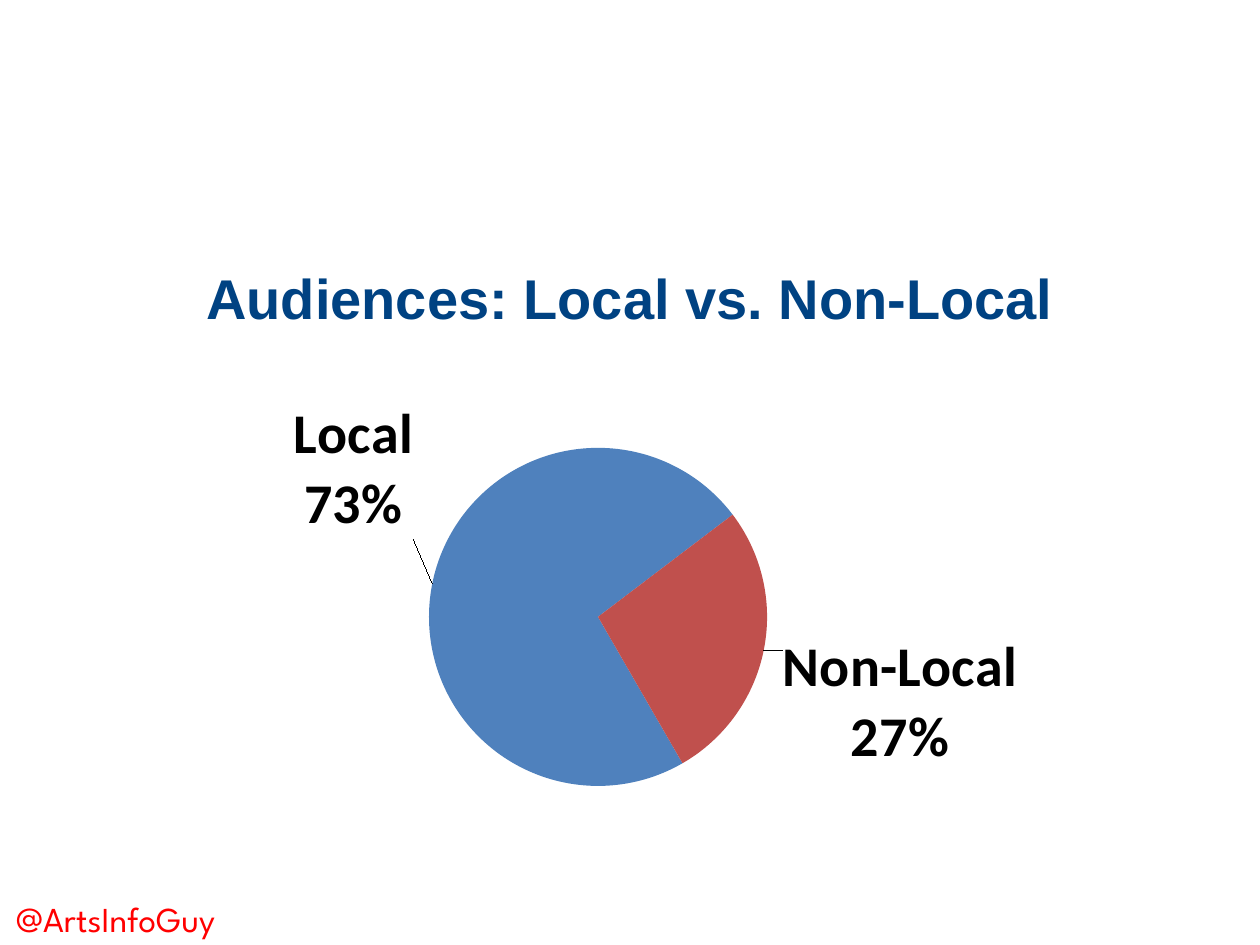
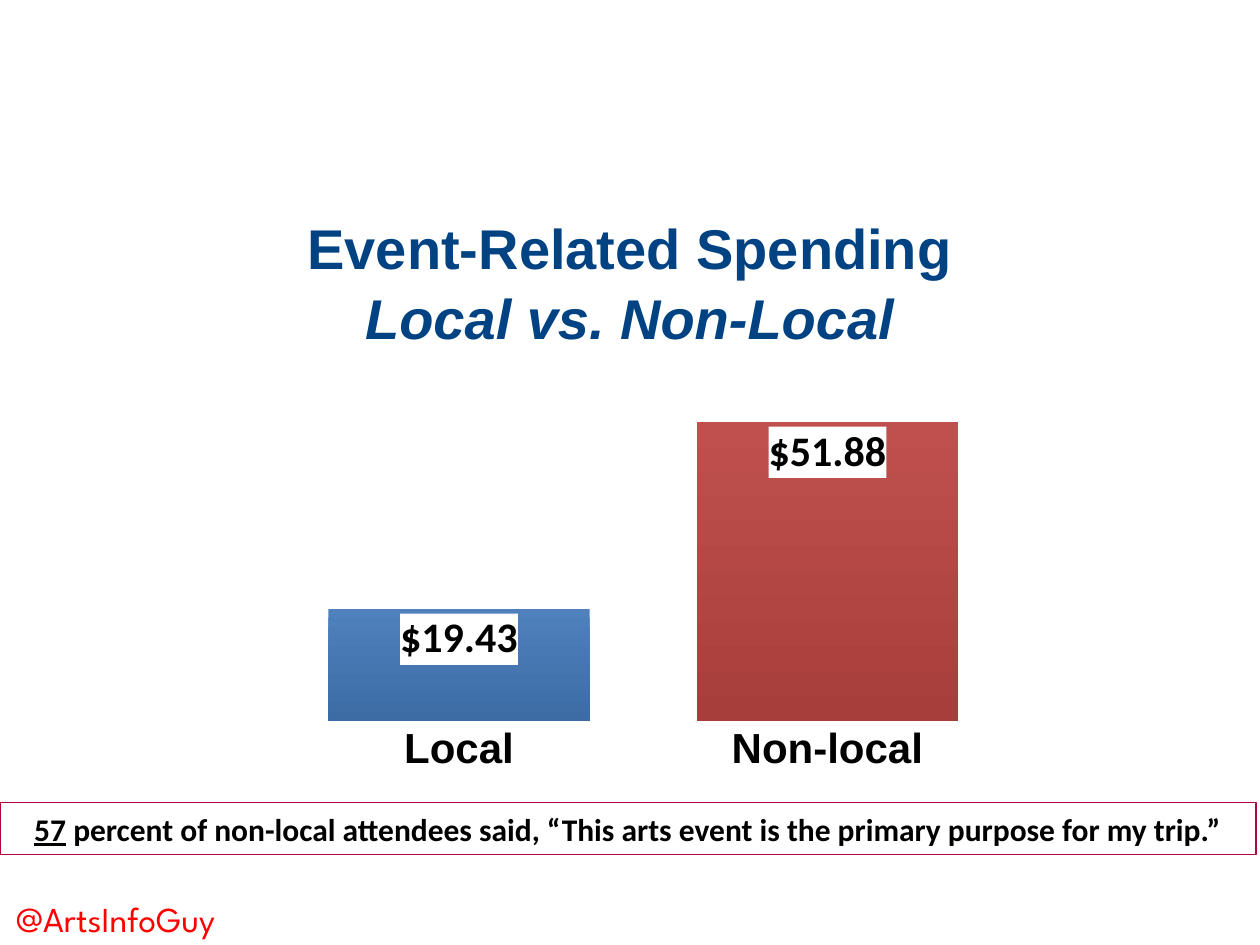
from lxml import etree
from pptx import Presentation
from pptx import util as u
from pptx.chart.data import CategoryChartData
from pptx.dml.color import RGBColor
from pptx.enum import chart as ch, shapes, text
from pptx.oxml import parse_xml
from pptx.oxml.ns import nsdecls, qn

WIDTH, HEIGHT = 10, 7.5
NAVY = RGBColor(0x00, 0x42, 0x82)
RED = RGBColor(0xFF, 0x00, 0x00)
CRIMSON = RGBColor(0xB1, 0x06, 0x3A)
BLACK = RGBColor(0x00, 0x00, 0x00)
LOCAL = RGBColor(0x4F, 0x81, 0xBD)
LOCAL_DARK = RGBColor(0x3D, 0x6C, 0xA4)
VISITOR = RGBColor(0xC0, 0x50, 0x4D)
VISITOR_DARK = RGBColor(0xA7, 0x3E, 0x3B)

HANDLE = "@ArtsInfoGuy"
DOLLARS = '"$"#,##0.00'
AUDIENCE = {
    "title": [("Audiences: Local vs. Non-Local", False)],
    "title_top": 2,
    "shares": {"Local": 73, "Non-Local": 27},
    "colours": [LOCAL, VISITOR],
    "label_shifts": [(-0.01, -0.09), (0.01, -0.04)],
    "chart_box": (-0.23, 2.95, 9.39, 3.78),
    "plot_box": {"x": 0.34, "y": 0.16, "w": 0.38, "h": 0.71},
    "first_angle": 150,
}
SPENDING = {
    "title": [("Event-Related Spending", False), ("Local vs. Non-Local", True)],
    "title_top": 1.6,
    "amounts": {"Local": 19.43, "Non-local": 51.88},
    "gradients": [(LOCAL, LOCAL_DARK), (VISITOR, VISITOR_DARK)],
    "chart_box": (2.06, 2.91, 6.09, 3.29),
    "quote": [
        ("57", True),
        (" percent of non-local attendees said, “This arts event is the "
         "primary purpose for my trip.”", False),
    ],
    "quote_box": (0, 6.37, 9.97, 0.41),
}


def inches(box):
    return [u.Inches(length) for length in box]


def style(font, name, size, colour, bold=False):
    font.name, font.size, font.bold = name, u.Pt(size), bold
    font.color.rgb = colour


def new_slide(deck, content):
    """Add a slide with its title and the handle at the foot."""
    slide = deck.slides.add_slide(deck.slide_layouts[0])
    subtitle = slide.placeholders[1].element
    subtitle.getparent().remove(subtitle)

    title = slide.shapes.title
    title.left, title.top, title.width, title.height = inches(
        (0, content["title_top"], WIDTH, 0.95))
    frame = title.text_frame
    frame.auto_size = text.MSO_AUTO_SIZE.NONE
    frame.vertical_anchor = text.MSO_ANCHOR.TOP
    frame.margin_top = u.Inches(0.07)
    heading = frame.paragraphs[0]
    heading.alignment = text.PP_ALIGN.CENTER
    heading.line_spacing = 1.04
    for number, (words, italic) in enumerate(content["title"]):
        if number:
            heading.add_line_break()
        run = heading.add_run()
        run.text = words
        style(run.font, "Arial", 32, NAVY, bold=True)
        run.font.italic = italic

    footer = slide.shapes.add_textbox(*inches((0.03, HEIGHT - 0.43, 2.15, 0.37)))
    footer.text_frame.word_wrap = True
    run = footer.text_frame.paragraphs[0].add_run()
    run.text = HANDLE
    style(run.font, "League Spartan", 20, RED)
    return slide


def add_chart(slide, kind, values, box, size):
    chart_data = CategoryChartData()
    chart_data.categories = list(values)
    chart_data.add_series("Series 1", list(values.values()))
    chart = slide.shapes.add_chart(kind, *inches(box), chart_data).chart
    chart.has_legend = chart.has_title = False
    style(chart.font, "Calibri", size, BLACK)
    return chart


def manual_layout(settings):
    parts = "".join(f'<c:{name} val="{value}"/>' for name, value in settings.items())
    return parse_xml(f'<c:layout {nsdecls("c")}><c:manualLayout>{parts}'
                     "</c:manualLayout></c:layout>")


def append_value(parent, tag, value):
    """Replace a chart element with one that holds this value, placed last."""
    for old in parent.findall(qn(tag)):
        parent.remove(old)
    etree.SubElement(parent, qn(tag)).set("val", str(value))


def add_audience_pie(slide, content):
    chart = add_chart(slide, ch.XL_CHART_TYPE.PIE, content["shares"],
                      content["chart_box"], 21.5)
    plot_area = chart.element.xpath(".//c:plotArea")[0]
    for old in plot_area.findall(qn("c:layout")):
        plot_area.remove(old)
    plot_area.insert(0, manual_layout({
        "layoutTarget": "inner", "xMode": "edge", "yMode": "edge",
        **content["plot_box"]}))
    append_value(plot_area.find(qn("c:pieChart")), "c:firstSliceAng",
                 content["first_angle"])

    wedges = chart.plots[0].series[0]
    labels = wedges.data_labels
    labels.show_value = False
    labels.show_percentage = labels.show_category_name = True
    labels.number_format, labels.number_format_is_linked = "0%", False
    labels.position = ch.XL_LABEL_POSITION.OUTSIDE_END
    style(labels.font, "Calibri", 32, BLACK, bold=True)

    for number, colour in enumerate(content["colours"]):
        wedge = wedges.points[number]
        wedge.format.fill.solid()
        wedge.format.fill.fore_color.rgb = colour
        wedge.data_label.position = ch.XL_LABEL_POSITION.OUTSIDE_END
        style(wedge.data_label.font, "Calibri", 32, BLACK, bold=True)

    shown = {"c:showVal": 0, "c:showCatName": 1, "c:showPercent": 1}
    for label, (x, y) in zip(chart.element.xpath(".//c:dLbl"),
                             content["label_shifts"]):
        label.insert(1, manual_layout({"x": x, "y": y}))
        label.insert(2, parse_xml(
            f'<c:numFmt {nsdecls("c")} formatCode="0%" sourceLinked="0"/>'))
        for tag, value in shown.items():
            label.find(qn(tag)).set("val", str(value))
        etree.SubElement(label, qn("c:separator")).text = "\n"


def add_spending_columns(slide, content):
    chart = add_chart(slide, ch.XL_CHART_TYPE.COLUMN_CLUSTERED,
                      content["amounts"], content["chart_box"], 10)
    amounts = chart.value_axis
    amounts.visible = amounts.has_major_gridlines = False
    amounts.minimum_scale, amounts.maximum_scale = 0, 60
    groups = chart.category_axis
    groups.major_tick_mark = ch.XL_TICK_MARK.NONE
    groups.format.line.fill.background()
    style(groups.tick_labels.font, "Arial", 24, BLACK, bold=True)

    plot = chart.plots[0]
    plot.gap_width = 41
    plot.vary_by_categories = False
    columns = plot.series[0]
    for number, colours in enumerate(content["gradients"]):
        fill = columns.points[number].format.fill
        fill.gradient()
        fill.gradient_angle = 270
        for stop, colour in zip(fill.gradient_stops, colours):
            stop.color.rgb = colour

    labels = columns.data_labels
    labels.show_value = True
    labels.number_format, labels.number_format_is_linked = DOLLARS, False
    labels.position = ch.XL_LABEL_POSITION.INSIDE_END
    style(labels.font, "Calibri", 24, BLACK, bold=True)
    white_box = parse_xml(
        f'<c:spPr {nsdecls("c", "a")}><a:solidFill><a:srgbClr val="FFFFFF"/>'
        "</a:solidFill></c:spPr>")
    chart.element.xpath(".//c:ser/c:dLbls/c:txPr")[0].addprevious(white_box)


def add_quote(slide, content):
    quote = slide.shapes.add_shape(shapes.MSO_SHAPE.RECTANGLE,
                                   *inches(content["quote_box"]))
    quote.shadow.inherit = False
    quote.fill.background()
    quote.line.color.rgb = CRIMSON
    quote.line.width = u.Pt(0.75)
    quote.text_frame.word_wrap = True
    quote.text_frame.vertical_anchor = text.MSO_ANCHOR.MIDDLE
    sentence = quote.text_frame.paragraphs[0]
    sentence.alignment = text.PP_ALIGN.CENTER
    for words, underlined in content["quote"]:
        run = sentence.add_run()
        run.text = words
        style(run.font, "Calibri", 18, BLACK, bold=True)
        run.font.underline = underlined


def main():
    deck = Presentation()
    deck.slide_width, deck.slide_height = inches((WIDTH, HEIGHT))
    add_audience_pie(new_slide(deck, AUDIENCE), AUDIENCE)
    spending = new_slide(deck, SPENDING)
    add_spending_columns(spending, SPENDING)
    add_quote(spending, SPENDING)
    deck.save("out.pptx")


if __name__ == "__main__":
    main()
